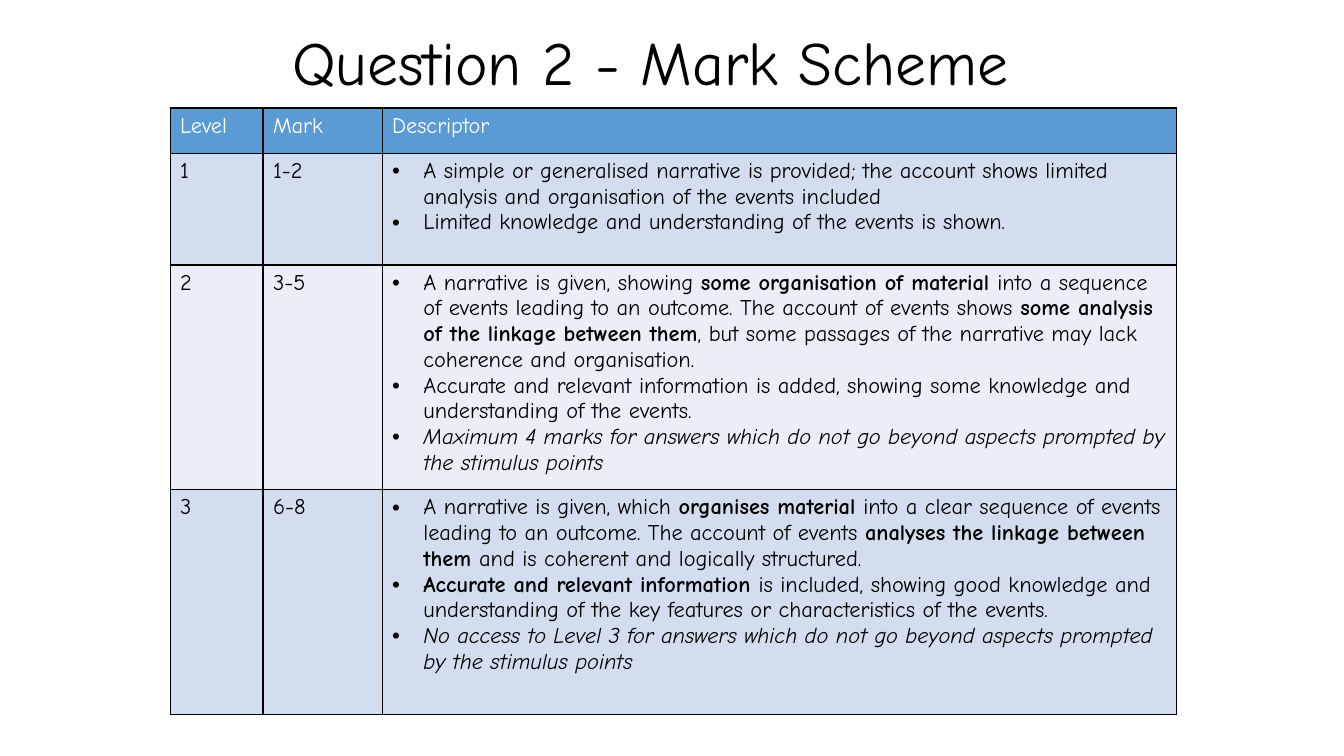
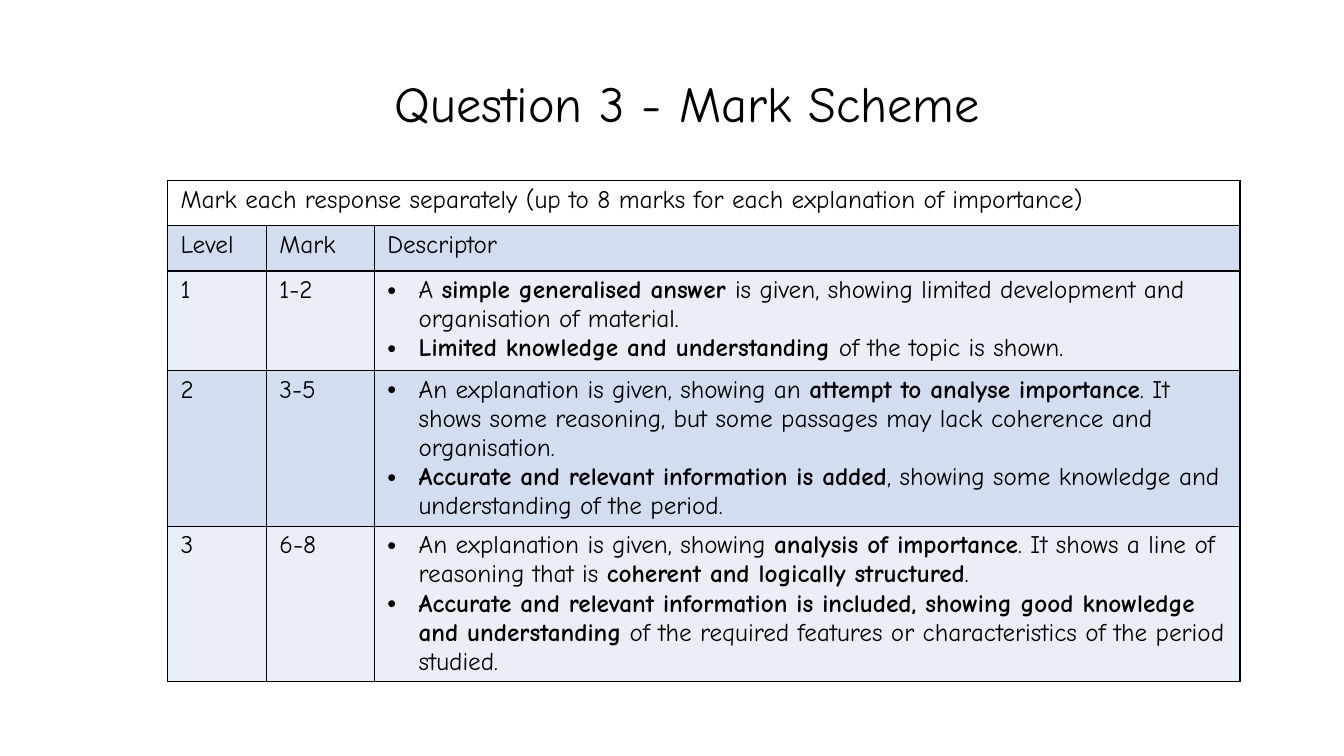
from lxml.etree import SubElement
from pptx import Presentation
from pptx.dml.color import RGBColor
from pptx.enum.text import MSO_ANCHOR, MSO_AUTO_SIZE, PP_ALIGN
from pptx.oxml.ns import qn
from pptx.util import Cm, Pt

FONT = "Comic Neue"
BLACK = RGBColor(0x00, 0x00, 0x00)
WHITE = RGBColor(0xFF, 0xFF, 0xFF)
BLUE = RGBColor(0x5B, 0x9B, 0xD5)
PALE = RGBColor(0xD2, 0xDE, 0xEF)
PALER = RGBColor(0xEA, 0xEF, 0xF7)

BULLET_INDENT = Cm(0.79)
BOLD, ITALIC = "*", "_"
HEADINGS = ["Level", "Mark", "Descriptor"]

SCHEMES = [
    {
        "title": "Question 2 - Mark Scheme",
        "title_box": (7.11, 0.56, 22.86, 2.16),
        "title_size": 44,
        "title_align": PP_ALIGN.LEFT,
        "corner": (4.29, 2.72),
        "columns": [2.34, 3, 20.02],
        "heights": [1.14, 2.82, 5.66, 5.66],
        "side_margin": 0.25,
        "size": 16,
        "fills": [BLUE, PALE, PALER, PALE],
        "heading_color": WHITE,
        "rows": [
            HEADINGS,
            ["1", "1-2", [
                "A simple or generalised narrative is provided; the account shows limited "
                "analysis and organisation of the events included",
                "Limited knowledge and understanding of the events is shown.",
            ]],
            ["2", "3-5", [
                "A narrative is given, showing *some organisation of material *into a sequence "
                "of events leading to an outcome. The account of events shows *some analysis "
                "of the linkage between them*, but some passages of the narrative may lack "
                "coherence and organisation.",
                "Accurate and relevant information is added, showing some knowledge and "
                "understanding of the events.",
                "_Maximum 4 marks for answers which do not go beyond aspects prompted by "
                "the stimulus points",
            ]],
            ["3", "6-8", [
                "A narrative is given, which *organises material *into a clear sequence of events "
                "leading to an outcome. The account of events *analyses the linkage between "
                "them *and is coherent and logically structured.",
                "*Accurate and relevant information *is included, showing good knowledge and "
                "understanding of the key features or characteristics of the events.",
                "_No access to Level 3 for answers which do not go beyond aspects prompted "
                "by the stimulus points",
            ]],
        ],
    },
    {
        "title": "Question 3 - Mark Scheme",
        "title_box": (2.08, 1.6, 30.48, 2.16),
        "title_size": 36,
        "title_align": PP_ALIGN.CENTER,
        "corner": (4.22, 4.55),
        "columns": [2.49, 2.72, 21.82],
        "heights": [1.14, 1.14, 2.51, 3.91, 3.91],
        "side_margin": 0.33,
        "size": 18,
        "fills": [WHITE, PALE, PALER, PALE, PALER],
        "heading_color": BLACK,
        "rows": [
            ["Mark each response separately (up to 8 marks for each explanation of importance)"],
            HEADINGS,
            ["1", "1-2", [
                "A *simple generalised answer *is given, showing limited development and "
                "organisation of material.",
                "*Limited knowledge and understanding *of the topic is shown.",
            ]],
            ["2", "3-5", [
                "An explanation is given, showing an *attempt to analyse importance*. It "
                "shows some reasoning, but some passages may lack coherence and organisation.",
                "*Accurate and relevant information is added*, showing some knowledge and "
                "understanding of the period.",
            ]],
            ["3", "6-8", [
                "An explanation is given, showing *analysis of importance*. It shows a line of "
                "reasoning that is *coherent and logically structured*.",
                "*Accurate and relevant information is included, showing good knowledge and "
                "understanding* of the required features or characteristics of the period studied.",
            ]],
        ],
    },
]


def write(paragraph, text, size, color=BLACK, align=None, spacing=None, bullet=False):
    paragraph.alignment = align
    paragraph.line_spacing = spacing
    if bullet:
        properties = paragraph._p.get_or_add_pPr()
        properties.set("marL", str(BULLET_INDENT))
        properties.set("indent", str(-BULLET_INDENT))
        SubElement(properties, qn("a:buFont"), typeface="Arial")
        SubElement(properties, qn("a:buChar"), char="•")
    italic = text.startswith(ITALIC)
    for index, part in enumerate(text.lstrip(ITALIC).split(BOLD)):
        if part:
            run = paragraph.add_run()
            run.text = part
            font = run.font
            font.name, font.size = FONT, Pt(size)
            font.bold, font.italic = index % 2 == 1, italic
            font.color.rgb = color


def add_borders(cell):
    properties = cell._tc.get_or_add_tcPr()
    for side in ("a:lnL", "a:lnR", "a:lnT", "a:lnB"):
        line = SubElement(properties, qn(side), w=str(Pt(1)))
        fill = SubElement(line, qn("a:solidFill"))
        SubElement(fill, qn("a:srgbClr"), val=str(BLACK))


def fill_cell(cell, content, size, color):
    frame = cell.text_frame
    if isinstance(content, str):
        write(frame.paragraphs[0], content, size, color=color)
        return
    for index, point in enumerate(content):
        paragraph = frame.add_paragraph() if index else frame.paragraphs[0]
        write(paragraph, point, size, color=color, bullet=True)


def add_title(slide, scheme):
    title = slide.shapes.title
    title.left, title.top, title.width, title.height = map(Cm, scheme["title_box"])
    frame = title.text_frame
    frame.auto_size = MSO_AUTO_SIZE.NONE
    frame.vertical_anchor = MSO_ANCHOR.MIDDLE
    write(frame.paragraphs[0], scheme["title"], scheme["title_size"],
          align=scheme["title_align"], spacing=0.9)


def add_mark_table(slide, scheme):
    columns, heights, rows = scheme["columns"], scheme["heights"], scheme["rows"]
    left, top = scheme["corner"]
    table = slide.shapes.add_table(
        len(rows), len(columns), Cm(left), Cm(top), Cm(sum(columns)), Cm(sum(heights))).table
    table.first_row = table.horz_banding = False
    for column, width in zip(table.columns, columns):
        column.width = Cm(width)
    for r, (row, height, fill) in enumerate(zip(rows, heights, scheme["fills"])):
        table.rows[r].height = Cm(height)
        color = scheme["heading_color"] if row is HEADINGS else BLACK
        for c in range(len(columns)):
            cell = table.cell(r, c)
            cell.margin_left = cell.margin_right = Cm(scheme["side_margin"])
            add_borders(cell)
            cell.fill.solid()
            cell.fill.fore_color.rgb = fill
            if c < len(row):
                fill_cell(cell, row[c], scheme["size"], color)
        if len(row) == 1:
            table.cell(r, 0).merge(table.cell(r, len(columns) - 1))


def main():
    deck = Presentation()
    deck.slide_width, deck.slide_height = Cm(33.87), Cm(19.05)
    title_only = deck.slide_layouts[5]
    for scheme in SCHEMES:
        slide = deck.slides.add_slide(title_only)
        add_title(slide, scheme)
        add_mark_table(slide, scheme)
    deck.save("out.pptx")


if __name__ == "__main__":
    main()
